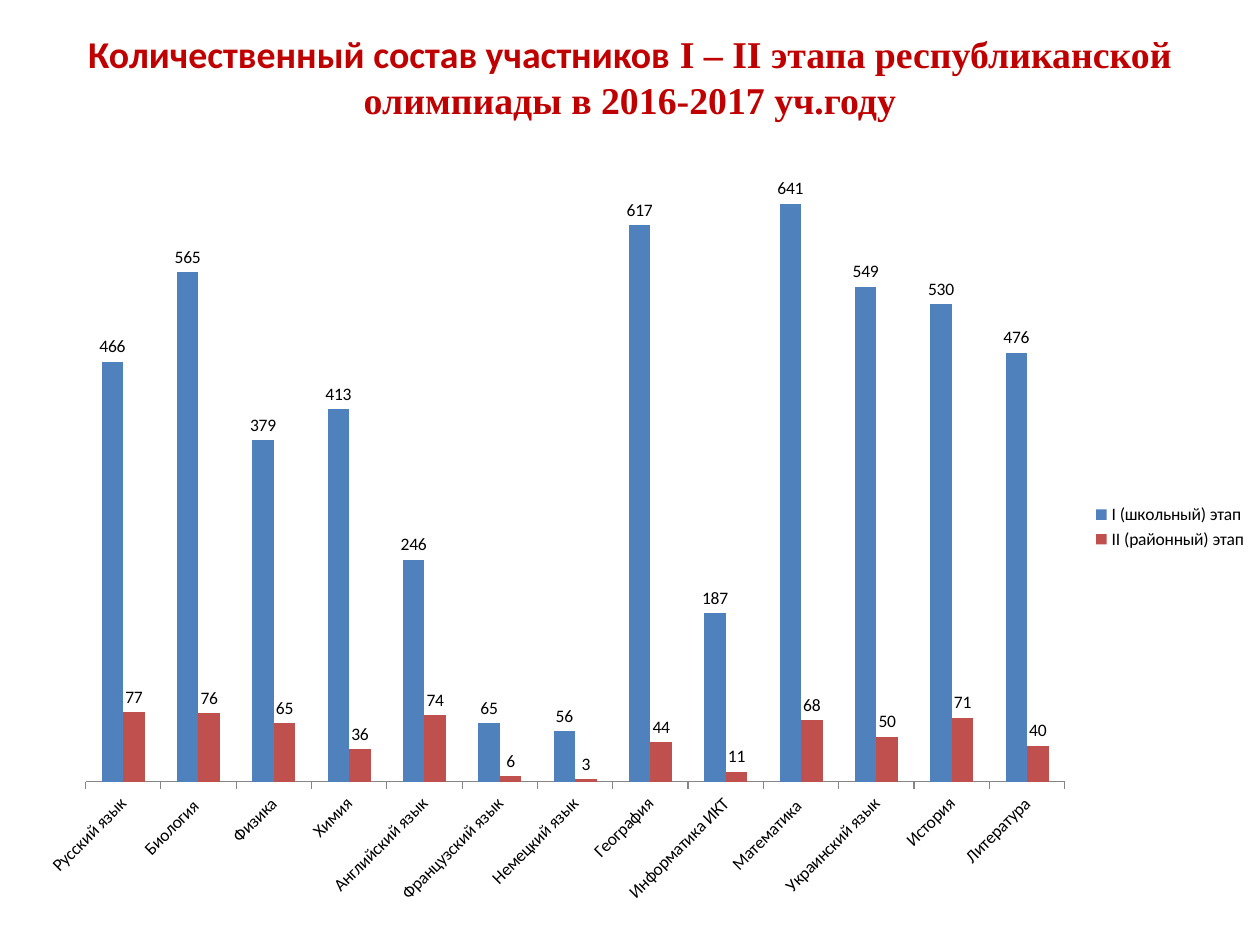
import pptx
import pptx.chart.data
import pptx.dml.color
import pptx.enum.chart
import pptx.enum.text
import pptx.util
from lxml import etree

# Content
TITLE_RUNS = [
    ("Количественный состав участников", "Calibri"),
    (" I – II этапа республиканской олимпиады в 2016-2017 уч.году", "Times New Roman"),
]
SERIES = [("І (школьный) этап", "school"), ("ІІ (районный) этап", "district")]
SUBJECTS = [
    ("Русский язык", 466, 77),
    ("Биология ", 565, 76),
    ("Физика", 379, 65),
    ("Химия", 413, 36),
    ("Английский язык", 246, 74),
    ("Французский язык", 65, 6),
    ("Немецкий язык", 56, 3),
    ("География", 617, 44),
    ("Информатика ИКТ", 187, 11),
    ("Математика ", 641, 68),
    ("Украинский язык", 549, 50),
    ("История", 530, 71),
    ("Литература", 476, 40),
]
COLORS = {"title": "C00000", "text": "000000", "axis": "868686",
          "school": "4F81BD", "district": "C0504D"}

# Geometry in px: left, top, width, height
PX = 914400 // 126
SLIDE_SIZE = (1260, 945)
TITLE_BOX = (63, 38, 1134, 77)
CHART_BOX = (25, 135, 1235, 784)
PLOT_BOX = (86, 151, 979, 631)


def emu(lengths):
    return [length * PX for length in lengths]


def color(name):
    return pptx.dml.color.RGBColor.from_string(COLORS[name])


def apply(target, values):
    for name, value in values.items():
        setattr(target, name, value)


def set_plot_area(chart):
    """Fix the inner plot area as fractions of the chart frame."""
    left, top, width, height = CHART_BOX
    x, y, w, h = PLOT_BOX
    fractions = {"x": (x - left) / width, "y": (y - top) / height,
                 "w": w / width, "h": h / height}
    plot_area = chart.plots[0]._element.getparent()
    namespace = "{%s}" % plot_area.nsmap["c"]
    for old_layout in plot_area.findall(namespace + "layout"):
        plot_area.remove(old_layout)
    layout = etree.Element(namespace + "layout")
    manual = etree.SubElement(layout, namespace + "manualLayout")
    settings = {"layoutTarget": "inner", "xMode": "edge", "yMode": "edge"}
    settings.update({key: f"{value:.3f}" for key, value in fractions.items()})
    for tag, value in settings.items():
        etree.SubElement(manual, namespace + tag).set("val", value)
    plot_area.insert(0, layout)


def add_title(slide):
    frame = slide.shapes.add_textbox(*emu(TITLE_BOX)).text_frame
    apply(frame, {"word_wrap": True,
                  "vertical_anchor": pptx.enum.text.MSO_ANCHOR.MIDDLE})
    paragraph = frame.paragraphs[0]
    paragraph.alignment = pptx.enum.text.PP_ALIGN.CENTER
    for text, font_name in TITLE_RUNS:
        run = paragraph.add_run()
        run.text = text
        apply(run.font, {"name": font_name, "size": pptx.util.Pt(21.6), "bold": True})
        run.font.color.rgb = color("title")


def add_stage_chart(slide):
    enums = pptx.enum.chart
    subjects, *stage_values = zip(*SUBJECTS)
    data = pptx.chart.data.CategoryChartData()
    data.categories = subjects
    for (name, _), values in zip(SERIES, stage_values):
        data.add_series(name, values)
    chart = slide.shapes.add_chart(
        enums.XL_CHART_TYPE.COLUMN_CLUSTERED, *emu(CHART_BOX), data).chart
    apply(chart, {"has_title": False, "has_legend": True})
    apply(chart.font, {"name": "Calibri", "size": pptx.util.Pt(10)})
    chart.font.color.rgb = color("text")
    apply(chart.legend, {"position": enums.XL_LEGEND_POSITION.RIGHT,
                         "include_in_layout": False})

    # Axes
    apply(chart.value_axis, {"visible": False, "has_major_gridlines": False,
                             "minimum_scale": 0, "maximum_scale": 700})
    apply(chart.category_axis, {"major_tick_mark": enums.XL_TICK_MARK.OUTSIDE,
                                "has_major_gridlines": False})
    axis_line = chart.category_axis.format.line
    axis_line.color.rgb = color("axis")
    axis_line.width = pptx.util.Pt(0.75)

    # Columns and value labels
    plot = chart.plots[0]
    apply(plot, {"gap_width": 150, "overlap": 0, "vary_by_categories": False})
    for series, (_, color_name) in zip(plot.series, SERIES):
        series.format.fill.solid()
        series.format.fill.fore_color.rgb = color(color_name)
        apply(series.data_labels, {"show_value": True,
                                   "position": enums.XL_LABEL_POSITION.OUTSIDE_END})
    set_plot_area(chart)


def main():
    presentation = pptx.Presentation()
    width, height = emu(SLIDE_SIZE)
    apply(presentation, {"slide_width": width, "slide_height": height})
    slide = presentation.slides.add_slide(presentation.slide_layouts[6])
    add_title(slide)
    add_stage_chart(slide)
    presentation.save("out.pptx")


if __name__ == "__main__":
    main()
